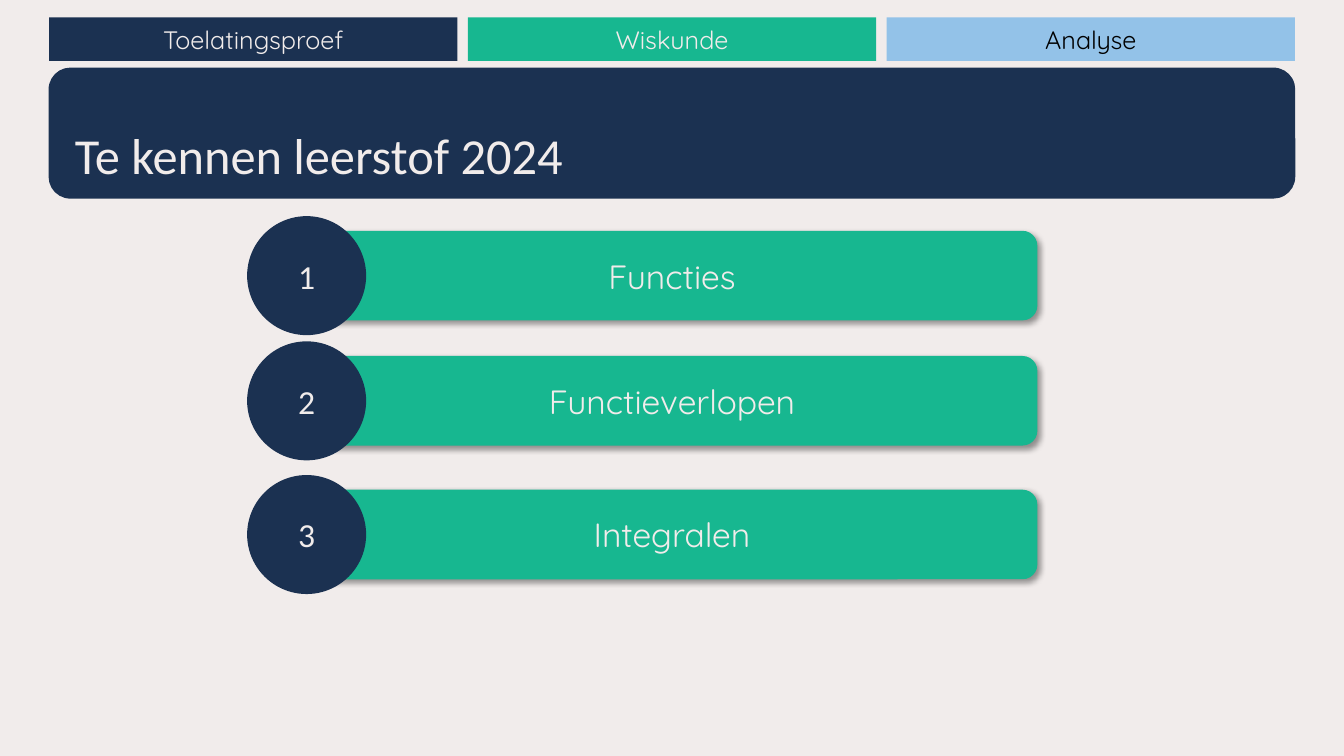
import pptx
import pptx.dml.color
import pptx.enum.shapes
import pptx.enum.text
import pptx.oxml
import pptx.oxml.ns
import pptx.util

Pt = pptx.util.Pt
RGBColor = pptx.dml.color.RGBColor
Shape = pptx.enum.shapes.MSO_SHAPE
Align = pptx.enum.text.PP_ALIGN
Anchor = pptx.enum.text.MSO_ANCHOR

NAVY = RGBColor(0x1B, 0x31, 0x51)
GREEN = RGBColor(0x17, 0xB7, 0x90)
SKY = RGBColor(0x93, 0xC2, 0xE8)
CREAM = RGBColor(0xF1, 0xEC, 0xEB)
BLACK = RGBColor(0, 0, 0)

TABS = [("Toelatingsproef", NAVY, CREAM), ("Wiskunde", GREEN, CREAM), ("Analyse", SKY, BLACK)]
TOPICS = [("Functies", 164.9), ("Functieverlopen", 254.3), ("Integralen", 349.8)]


def write(holder, text, font="Quicksand", size=24, color=CREAM,
          align=Align.CENTER, anchor=Anchor.MIDDLE):
    """Put formatted text in a shape."""
    frame = holder.text_frame
    frame.word_wrap = True
    frame.auto_size = pptx.enum.text.MSO_AUTO_SIZE.NONE
    frame.vertical_anchor = anchor
    paragraph = frame.paragraphs[0]
    paragraph.alignment = align
    run = paragraph.add_run()
    run.text = text
    run.font.name = font
    run.font.size = Pt(size)
    run.font.bold = False
    run.font.color.rgb = color


def add_block(slide, kind, left, top, width, height, fill):
    """Add a flat filled shape without outline."""
    block = slide.shapes.add_shape(kind, Pt(left), Pt(top), Pt(width), Pt(height))
    block.shadow.inherit = False
    block.fill.solid()
    block.fill.fore_color.rgb = fill
    block.line.fill.background()
    return block


def cast_shadow(block):
    """Give a block a soft shadow to its lower right."""
    effects = block._element.spPr.find(pptx.oxml.ns.qn("a:effectLst"))
    effects.append(pptx.oxml.parse_xml(
        f'<a:outerShdw {pptx.oxml.ns.nsdecls("a")} blurRad="{Pt(4)}" dist="{Pt(3)}" '
        'dir="2700000" algn="tl" rotWithShape="0">'
        '<a:srgbClr val="000000"><a:alpha val="40000"/></a:srgbClr></a:outerShdw>'))


def add_tabs(slide, left, top, width, height, gap=7.5):
    """Spread the navigation tabs evenly over the given box."""
    tab_width = (width - gap * (len(TABS) - 1)) / len(TABS)
    for index, (label, fill, color) in enumerate(TABS):
        tab = add_block(slide, Shape.RECTANGLE, left + index * (tab_width + gap), top,
                        tab_width, height, fill)
        write(tab, label, size=18, color=color)


def add_banner(slide, left, top, width, height):
    """Draw the rounded banner with the slide title on it."""
    add_block(slide, Shape.ROUNDED_RECTANGLE, left, top, width, height, NAVY)
    title = slide.shapes.title
    slide.shapes._spTree.append(title._element)
    title.left, title.top = Pt(left + 11.5), Pt(top + 7)
    title.width, title.height = Pt(width - 23), Pt(height - 13.7)
    write(title, "Te kennen leerstof 2024", font="Calibri", size=36,
          align=Align.LEFT, anchor=Anchor.BOTTOM)


def add_topic(slide, number, topic, left, top, width, height, diameter=85):
    """Draw a topic bar with its number circle centred on the left edge."""
    bar = add_block(slide, Shape.ROUNDED_RECTANGLE, left, top, width, height, GREEN)
    cast_shadow(bar)
    write(bar, topic)
    circle = add_block(slide, Shape.OVAL, left - diameter / 2, top + (height - diameter) / 2,
                       diameter, diameter, NAVY)
    write(circle, str(number), font="Calibri")


def main():
    """Build and save the slide."""
    deck = pptx.Presentation()
    deck.slide_width, deck.slide_height = Pt(960), Pt(540)
    slide = deck.slides.add_slide(deck.slide_layouts[5])
    slide.background.fill.solid()
    slide.background.fill.fore_color.rgb = CREAM
    add_tabs(slide, 35, 12.5, 890, 31)
    add_banner(slide, 34.7, 48.3, 890.5, 93.6)
    for number, (topic, top) in enumerate(TOPICS, 1):
        add_topic(slide, number, topic, 219, top, 522, 64)
    deck.save("out.pptx")


if __name__ == "__main__":
    main()
